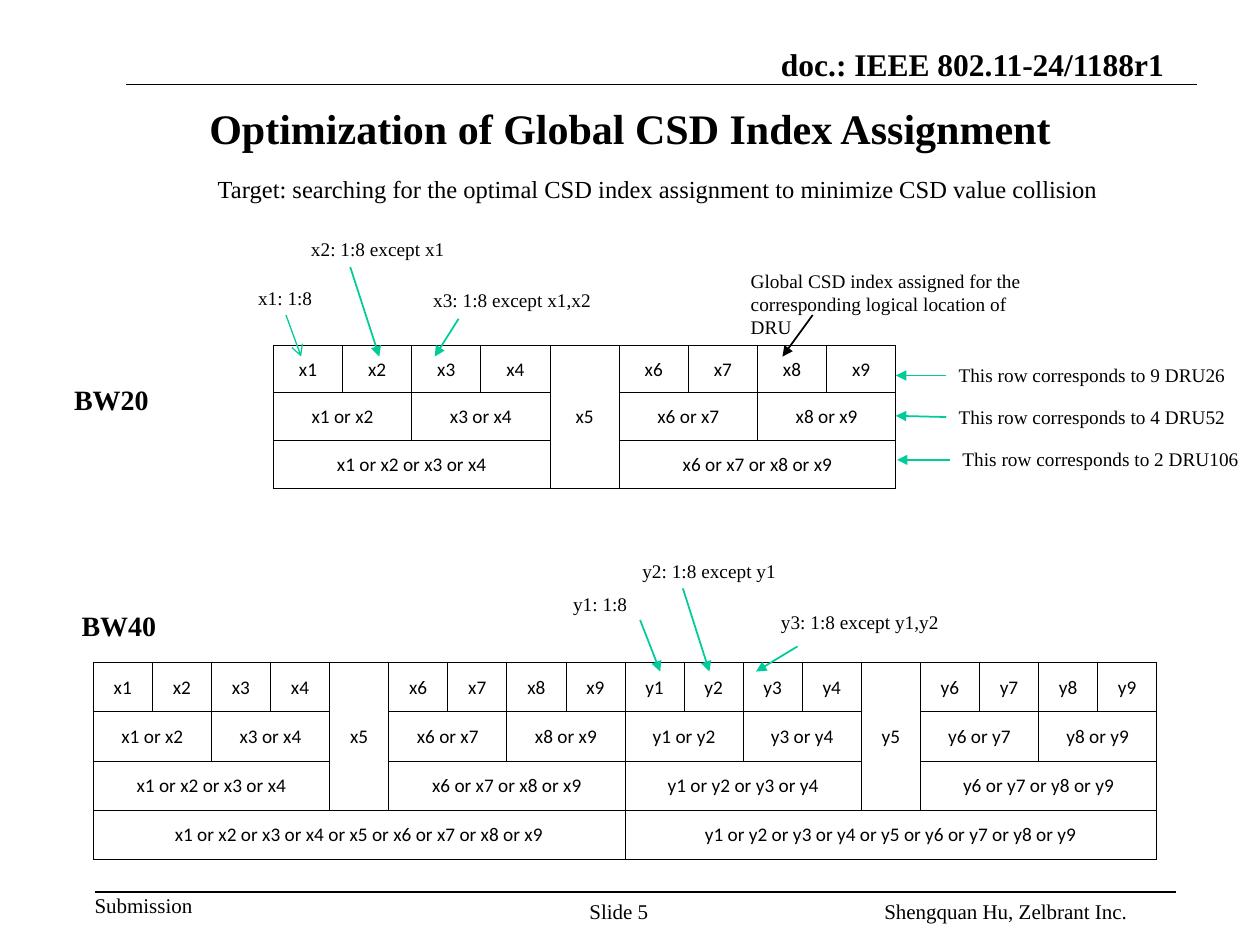
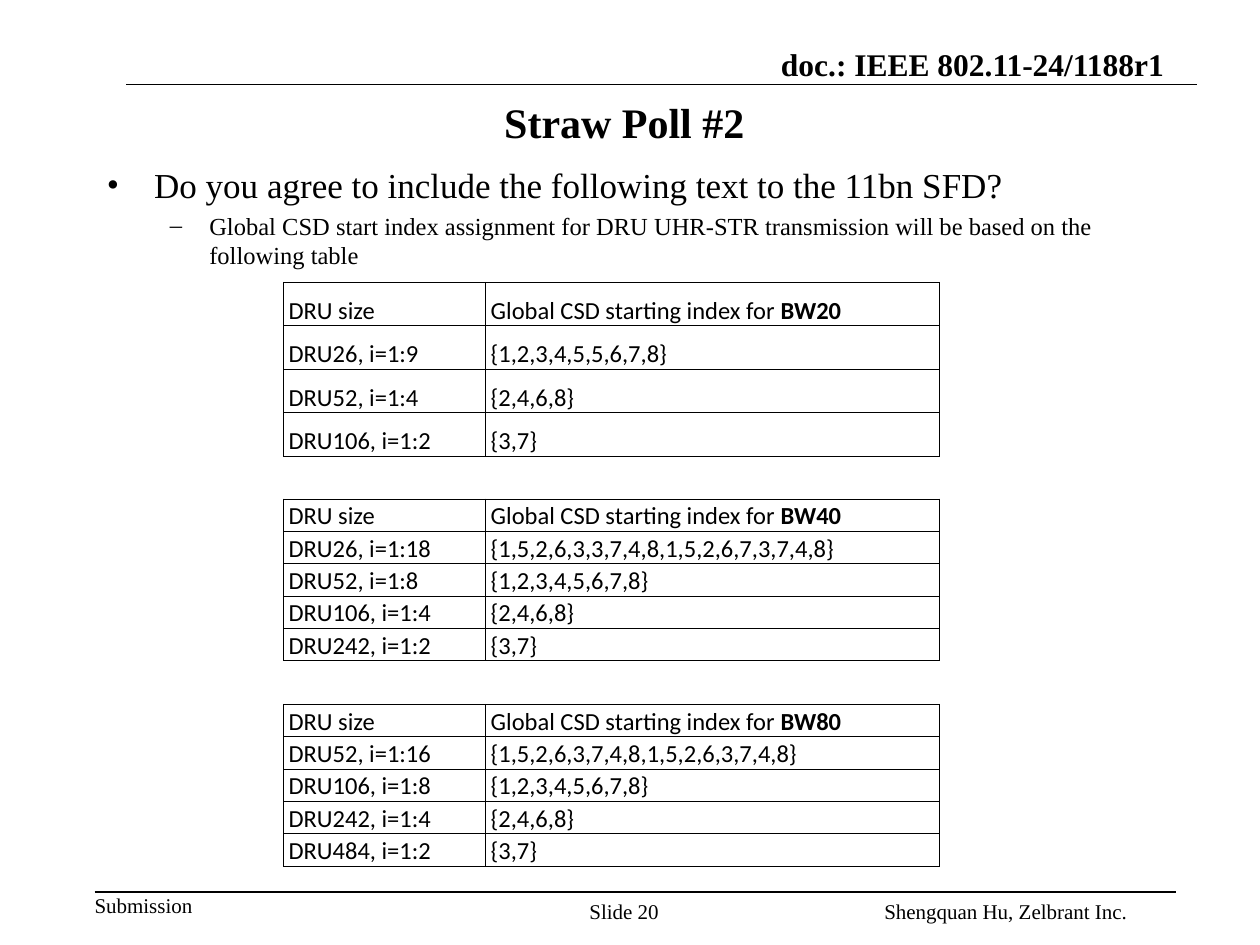
import dataclasses

import pptx
import pptx.dml.color
import pptx.enum.shapes
import pptx.enum.text
import pptx.oxml
import pptx.oxml.ns
import pptx.util

PT = pptx.util.Pt
ALIGN = pptx.enum.text.PP_ALIGN
ANCHOR = pptx.enum.text.MSO_ANCHOR
NS = pptx.oxml.ns.nsdecls("a")


@dataclasses.dataclass(frozen=True)
class Theme:
    ink: str = "000000"
    accent: str = "00CC99"
    serif: str = "Times New Roman"
    sans: str = "Calibri"
    title: int = 24
    bullet: int = 20
    header: int = 18
    band: int = 16
    body: int = 14
    footer: int = 12
    label: int = 11
    line: float = 1
    border: float = 0.5


theme = Theme()
prs = pptx.Presentation()
prs.slide_width = pptx.util.Inches(10)
prs.slide_height = pptx.util.Inches(7.5)
COL = prs.slide_width / 100
ROW = prs.slide_height / 75


def add_text(s, x, y, w, h, lines, size, bold=False, align=ALIGN.LEFT,
             anchor=ANCHOR.TOP, wrap=False, inset=1):
    sp = s.shapes.add_textbox(*(round(v) for v in (x * COL, y * ROW, w * COL, h * ROW)))
    tf = sp.text_frame
    tf.word_wrap = wrap
    tf.vertical_anchor = anchor
    tf.margin_left = tf.margin_right = round(inset * COL)
    tf.margin_top = tf.margin_bottom = round(inset * ROW / 2)
    for i, line in enumerate(lines):
        p = tf.paragraphs[0] if i == 0 else tf.add_paragraph()
        p.alignment = align
        r = p.add_run()
        r.text = line
        r.font.size, r.font.bold, r.font.name = PT(size), bold, theme.serif
        r.font.color.rgb = pptx.dml.color.RGBColor.from_string(theme.ink)
    return tf


def add_grid(s, x, y, widths, row_h, n_rows, cells, size, align, anchor, pad):
    frame = s.shapes.add_table(n_rows, len(widths), round(x * COL), round(y * ROW),
                               round(sum(widths) * COL), round(n_rows * row_h * ROW))
    tbl = frame.table
    tbl.first_row = tbl.horz_banding = False
    for column, width in zip(tbl.columns, widths):
        column.width = round(width * COL)
    for row in tbl.rows:
        row.height = round(row_h * ROW)
    for cell in tbl.iter_cells():
        cell.margin_left = round(pad * COL)
        cell.margin_right = cell.margin_top = round(0.1 * COL)
        cell.margin_bottom = 0
        cell.vertical_anchor = anchor
        tcPr = cell._tc.get_or_add_tcPr()
        for side in ("lnL", "lnR", "lnT", "lnB"):
            tcPr.append(pptx.oxml.parse_xml(
                f'<a:{side} {NS} w="{PT(theme.border)}"><a:solidFill>'
                f'<a:srgbClr val="{theme.ink}"/></a:solidFill></a:{side}>'))
        cell.fill.background()
    for row, col, row_span, col_span, runs in cells:
        cell = tbl.cell(row, col)
        if row_span * col_span > 1:
            cell.merge(tbl.cell(row + row_span - 1, col + col_span - 1))
        p = cell.text_frame.paragraphs[0]
        p.alignment = align
        for content, bold in runs:
            r = p.add_run()
            r.text = content
            r.font.size, r.font.bold, r.font.name = PT(size), bold, theme.sans
            r.font.color.rgb = pptx.dml.color.RGBColor.from_string(theme.ink)


lines = []
slides = []
for title, number, x, y, w in [
    ("Optimization of Global CSD Index Assignment", 5, 2.1, 8.4, 95.8),
    ("Straw Poll #2", 20, 4.6, 8, 89.9),
]:
    s = prs.slides.add_slide(prs.slide_layouts[6])
    slides.append(s)
    add_text(s, 56.6, 3.6, 35.8, 3, ["doc.: IEEE 802.11-24/1188r1"], theme.header, True,
             ALIGN.RIGHT, ANCHOR.BOTTOM, inset=0)
    add_text(s, 7.5, 70.8, 7.8, 2, ["Submission"], theme.footer, inset=0)
    add_text(s, x, y, w, 3.4, [title], theme.title, True, ALIGN.CENTER, ANCHOR.MIDDLE, True)
    add_text(s, 69.2, 70.8, 24.3, 1.7, ["Shengquan Hu, Zelbrant Inc."], theme.footer, wrap=True)
    add_text(s, 45.8, 70.8, 8.3, 2.5, [f"Slide {number}"], theme.footer, wrap=True)
    lines += [
        (s, 10, 6.7, 95, 6.7, theme.ink, None),
        (s, 7.5, 70.8, 93.3, 70.8, theme.ink, None),
    ]
assignment, poll = slides

groups = [(0, n, n) for n in range(1, 10)]
groups += [(1, n, n + 1) for n in (1, 3, 6, 8)]
groups += [(2, 1, 4), (2, 6, 9), (3, 1, 9)]
for x, y, col_w, row_h, n_rows, letters in [
    (21.7, 27.4, 5.49, 3.78, 3, "x"),
    (7.4, 52.6, 4.69, 3.9, 4, "xy"),
]:
    cells = []
    for block, letter in enumerate(letters):
        for row, first, last in groups:
            if row < n_rows:
                content = " or ".join(f"{letter}{n}" for n in range(first, last + 1))
                row_span = 3 if first == last == 5 else 1
                cells.append((row, block * 9 + first - 1, row_span, last - first + 1,
                              [(content, False)]))
    add_grid(assignment, x, y, [col_w] * 9 * len(letters), row_h, n_rows, cells,
             theme.label, ALIGN.CENTER, ANCHOR.MIDDLE, 0.1)

for x, y, w, label in [
    (19.5, 22.2, 6.3, "x1: 1:8"),
    (23.7, 18.3, 12.7, "x2: 1:8 except x1"),
    (33.4, 22.4, 14.6, "x3: 1:8 except x1,x2"),
    (44.5, 46.5, 6.3, "y1: 1:8"),
    (50, 43.9, 12.7, "y2: 1:8 except y1"),
    (61, 47.9, 14.6, "y3: 1:8 except y1,y2"),
    (75.1, 28.3, 23.3, "This row corresponds to 9 DRU26"),
    (75.1, 31.7, 23.3, "This row corresponds to 4 DRU52"),
    (75.4, 35, 24.1, "This row corresponds to 2 DRU106"),
]:
    add_text(assignment, x, y, w, 2.9, [label], theme.label)
for x, y, label in [(4.9, 29.9, "BW20"), (5.5, 47.8, "BW40")]:
    add_text(assignment, x, y, 8, 3.7, [label], theme.band, True)
add_text(assignment, 58.6, 20.9, 25.8, 4.7,
         ["Global CSD index assigned for the corresponding logical location of DRU"],
         theme.label, wrap=True)
add_text(assignment, 16.3, 13.3, 72.3, 3.4,
         ["Target: searching for the optimal CSD index assignment to minimize CSD value collision"],
         theme.body)

lines += [
    (assignment, 22.7, 25, 23.9, 28.3, theme.accent, "arrow"),
    (assignment, 64.5, 25, 62.1, 28.3, theme.ink, "triangle"),
]
lines += [(assignment, *ends, theme.accent, "triangle") for ends in [
    (27.8, 21.2, 30.1, 28.3),
    (36.4, 25.3, 34.5, 28.3),
    (75.1, 29.8, 71.1, 29.8),
    (75.1, 33.1, 71.1, 33),
    (75.4, 36.5, 71.2, 36.5),
    (50.8, 49.2, 52.4, 53.3),
    (54.2, 46.7, 56.3, 53.3),
    (63.3, 51.3, 60, 53.3),
]]

tf = add_text(poll, 7.5, 12.5, 85, 9.2, [
    "Do you agree to include the following text to the 11bn SFD?",
    "Global CSD start index assignment for DRU UHR-STR transmission will be based on the following table",
], theme.bullet, wrap=True)
for p, level, mark, size, left, hang in zip(
        tf.paragraphs, (0, 1), "•–", (theme.bullet, theme.body), (3.75, 8.13), (3.75, 3.13)):
    p.level = level
    p.space_before = PT(size / 5)
    p.runs[0].font.size = PT(size)
    pPr = p._p.get_or_add_pPr()
    pPr.set("marL", str(round(left * COL)))
    pPr.set("indent", str(round(-hang * COL)))
    pPr.append(pptx.oxml.parse_xml(f'<a:buFont {NS} typeface="{theme.serif}"/>'))
    pPr.append(pptx.oxml.parse_xml(f'<a:buChar {NS} char="{mark}"/>'))

for band, y, row_h, rows in [
    ("BW20", 22.4, 3.45, [
        ("DRU26, i=1:9", "{1,2,3,4,5,5,6,7,8}"),
        ("DRU52, i=1:4", "{2,4,6,8}"),
        ("DRU106, i=1:2", "{3,7}"),
    ]),
    ("BW40", 39.6, 2.57, [
        ("DRU26, i=1:18", "{1,5,2,6,3,3,7,4,8,1,5,2,6,7,3,7,4,8}"),
        ("DRU52, i=1:8", "{1,2,3,4,5,6,7,8}"),
        ("DRU106, i=1:4", "{2,4,6,8}"),
        ("DRU242, i=1:2", "{3,7}"),
    ]),
    ("BW80", 55.9, 2.57, [
        ("DRU52, i=1:16", "{1,5,2,6,3,7,4,8,1,5,2,6,3,7,4,8}"),
        ("DRU106, i=1:8", "{1,2,3,4,5,6,7,8}"),
        ("DRU242, i=1:4", "{2,4,6,8}"),
        ("DRU484, i=1:2", "{3,7}"),
    ]),
]:
    cells = [(0, 0, 1, 1, [("DRU size", False)]),
             (0, 1, 1, 1, [("Global CSD starting index for ", False), (band, True)])]
    cells += [(i, j, 1, 1, [(content, False)])
              for i, row in enumerate(rows, 1) for j, content in enumerate(row)]
    add_grid(poll, 22.5, y, [16.05, 36], row_h, len(rows) + 1, cells,
             theme.body, ALIGN.LEFT, ANCHOR.BOTTOM, 0.4)

for s, x1, y1, x2, y2, color, head in lines:
    sp = s.shapes.add_connector(pptx.enum.shapes.MSO_CONNECTOR.STRAIGHT, round(x1 * COL),
                                round(y1 * ROW), round(x2 * COL), round(y2 * ROW))
    sp.line.color.rgb = pptx.dml.color.RGBColor.from_string(color)
    sp.line.width = PT(0.75 if head == "arrow" else theme.line)
    if head:
        sp.line._get_or_add_ln().append(
            pptx.oxml.parse_xml(f'<a:tailEnd {NS} type="{head}"/>'))
    sp._element.spPr.append(pptx.oxml.parse_xml(f"<a:effectLst {NS}/>"))

prs.save("out.pptx")
